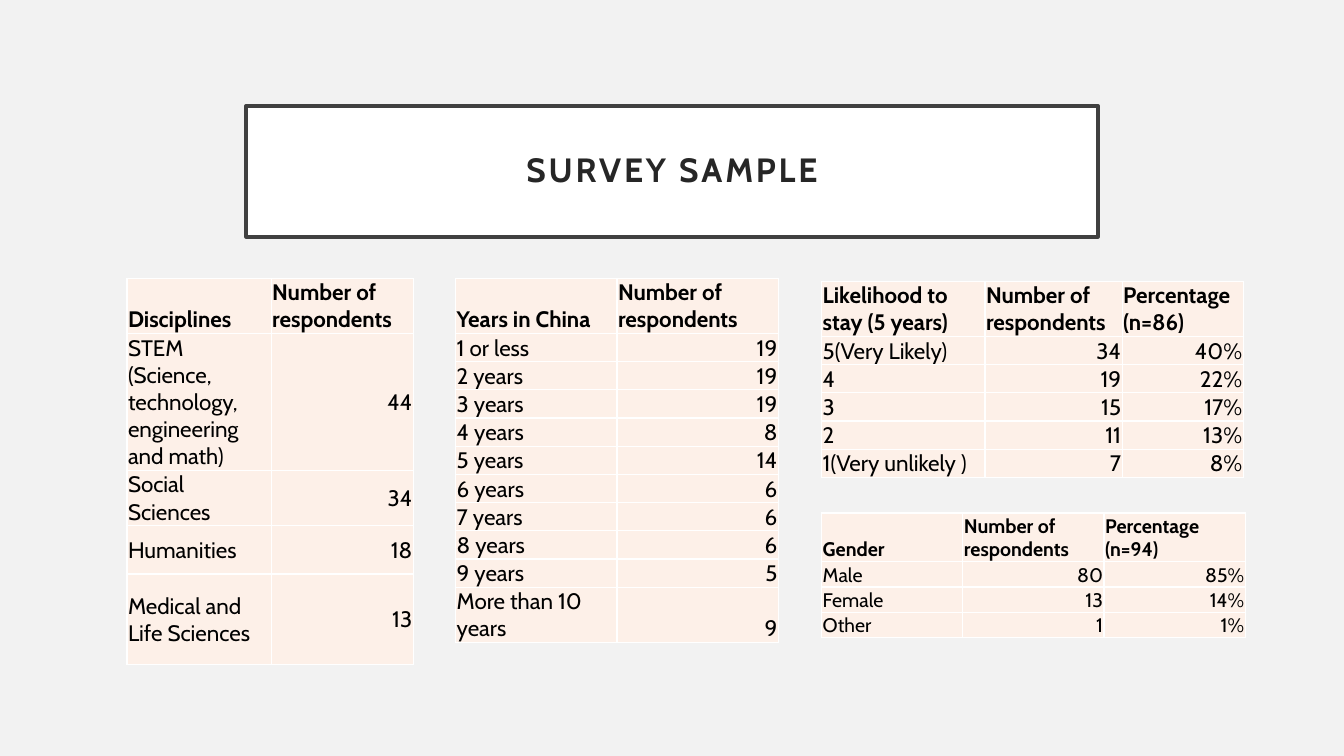
"""Build the survey sample slide with its four respondent tables."""
from dataclasses import dataclass

from lxml import etree
from pptx import Presentation
from pptx.dml.color import RGBColor
from pptx.enum.shapes import MSO_SHAPE
from pptx.enum.text import MSO_ANCHOR, PP_ALIGN
from pptx.oxml.ns import qn
from pptx.slide import Slide
from pptx.table import _Cell
from pptx.util import Inches, Pt

RECTANGLE = MSO_SHAPE.RECTANGLE
MIDDLE, BOTTOM = MSO_ANCHOR.MIDDLE, MSO_ANCHOR.BOTTOM
LEFT, CENTER, RIGHT = PP_ALIGN.LEFT, PP_ALIGN.CENTER, PP_ALIGN.RIGHT

BACKGROUND = RGBColor(0xF2, 0xF2, 0xF2)
WHITE = RGBColor(0xFF, 0xFF, 0xFF)
BLACK = RGBColor(0x00, 0x00, 0x00)
FRAME = RGBColor(0x40, 0x40, 0x40)
TITLE = RGBColor(0x26, 0x26, 0x26)
CREAM = RGBColor(0xFD, 0xF0, 0xE8)
FONT = "Cabin"


@dataclass
class SurveyTable:
    """A table with its place, sizes in inches and rows of text."""
    left: float
    top: float
    widths: list[float]
    heights: list[float]
    rows: list[tuple[str, ...]]
    size: int = 16
    body_anchor: MSO_ANCHOR = BOTTOM


TABLES = [
    SurveyTable(1.26, 2.76, [1.43, 1.41], [0.54, 1.36, 0.54, 0.48, 0.9], [
        ("Disciplines", "Number of respondents"),
        ("STEM (Science, technology, engineering and math)", "44"),
        ("Social Sciences", "34"),
        ("Humanities", "18"),
        ("Medical and Life Sciences", "13"),
    ], body_anchor=MIDDLE),
    SurveyTable(4.52, 2.76, [1.6, 1.6], [0.54] + [0.28] * 9 + [0.54], [
        ("Years in China", "Number of respondents"),
        ("1 or less", "19"),
        ("2 years", "19"),
        ("3 years", "19"),
        ("4 years", "8"),
        ("5 years", "14"),
        ("6 years", "6"),
        ("7 years", "6"),
        ("8 years", "6"),
        ("9 years", "5"),
        ("More than 10 years", "9"),
    ]),
    SurveyTable(8.15, 2.79, [1.62, 1.36, 1.2], [0.54] + [0.28] * 5, [
        ("Likelihood to stay (5 years)", "Number of respondents", "Percentage (n=86)"),
        ("5(Very Likely)", "34", "40%"),
        ("4", "19", "22%"),
        ("3", "15", "17%"),
        ("2", "11", "13%"),
        ("1(Very unlikely )", "7", "8%"),
    ]),
    SurveyTable(8.15, 5.09, [1.4] * 3, [0.48] + [0.25] * 3, [
        ("Gender", "Number of respondents", "Percentage (n=94)"),
        ("Male", "80", "85%"),
        ("Female", "13", "14%"),
        ("Other", "1", "1%"),
    ], size=14),
]


def add_borders(cell: _Cell) -> None:
    """Give a cell thin white borders on all sides."""
    tc_pr = cell._tc.get_or_add_tcPr()
    for side in ("a:lnL", "a:lnR", "a:lnT", "a:lnB"):
        ln = etree.SubElement(tc_pr, qn(side), w=str(Pt(1)))
        fill = etree.SubElement(ln, qn("a:solidFill"))
        etree.SubElement(fill, qn("a:srgbClr"), val=str(WHITE))


def fill_cell(cell: _Cell, text: str, size: int, header: bool,
              anchor: MSO_ANCHOR, align: PP_ALIGN) -> None:
    """Write and style one table cell."""
    add_borders(cell)
    cell.fill.solid()
    cell.fill.fore_color.rgb = CREAM
    cell.margin_left = cell.margin_right = cell.margin_top = Inches(0.01)
    cell.margin_bottom = 0
    cell.vertical_anchor = anchor
    p = cell.text_frame.paragraphs[0]
    p.text = text
    p.alignment = align
    p.font.name, p.font.size, p.font.bold = FONT, Pt(size), header
    p.font.color.rgb = BLACK


def add_survey_table(s: Slide, spec_table: SurveyTable) -> None:
    """Draw one survey table."""
    t = spec_table
    table = s.shapes.add_table(
        len(t.rows), len(t.widths), Inches(t.left), Inches(t.top),
        Inches(sum(t.widths)), Inches(sum(t.heights))).table
    table.horz_banding = False
    for column, width in zip(table.columns, t.widths):
        column.width = Inches(width)
    for i, (height, texts) in enumerate(zip(t.heights, t.rows)):
        table.rows[i].height = Inches(height)
        header = i == 0
        for j, text in enumerate(texts):
            fill_cell(table.cell(i, j), text, t.size, header,
                      BOTTOM if header else t.body_anchor,
                      LEFT if header or j == 0 else RIGHT)


def add_title(s: Slide) -> None:
    """Draw the framed title."""
    sp = s.shapes.add_shape(RECTANGLE, Inches(2.44), Inches(1.05),
                            Inches(8.45), Inches(1.3))
    sp.shadow.inherit = False
    sp.fill.solid()
    sp.fill.fore_color.rgb = WHITE
    sp.line.color.rgb = FRAME
    sp.line.width = Pt(2.5)
    tf = sp.text_frame
    tf.word_wrap = True
    tf.vertical_anchor = MIDDLE
    tf.margin_left = tf.margin_right = Inches(0.2)
    tf.margin_top = tf.margin_bottom = Inches(0.2)
    p = tf.paragraphs[0]
    p.alignment = CENTER
    p.line_spacing = 0.9
    p.font.name, p.font.size, p.font.bold = FONT, Pt(24), True
    p.font.color.rgb = TITLE
    r = p.add_run()
    r.text = "SURVEY SAMPLE"
    r._r.get_or_add_rPr().set("spc", "200")


def main() -> None:
    """Build and save the slide."""
    prs = Presentation()
    prs.slide_width, prs.slide_height = Inches(13.33), Inches(7.5)
    s = prs.slides.add_slide(prs.slide_layouts[6])
    s.background.fill.solid()
    s.background.fill.fore_color.rgb = BACKGROUND
    add_title(s)
    for survey_table in TABLES:
        add_survey_table(s, survey_table)
    prs.save("out.pptx")


if __name__ == "__main__":
    main()
